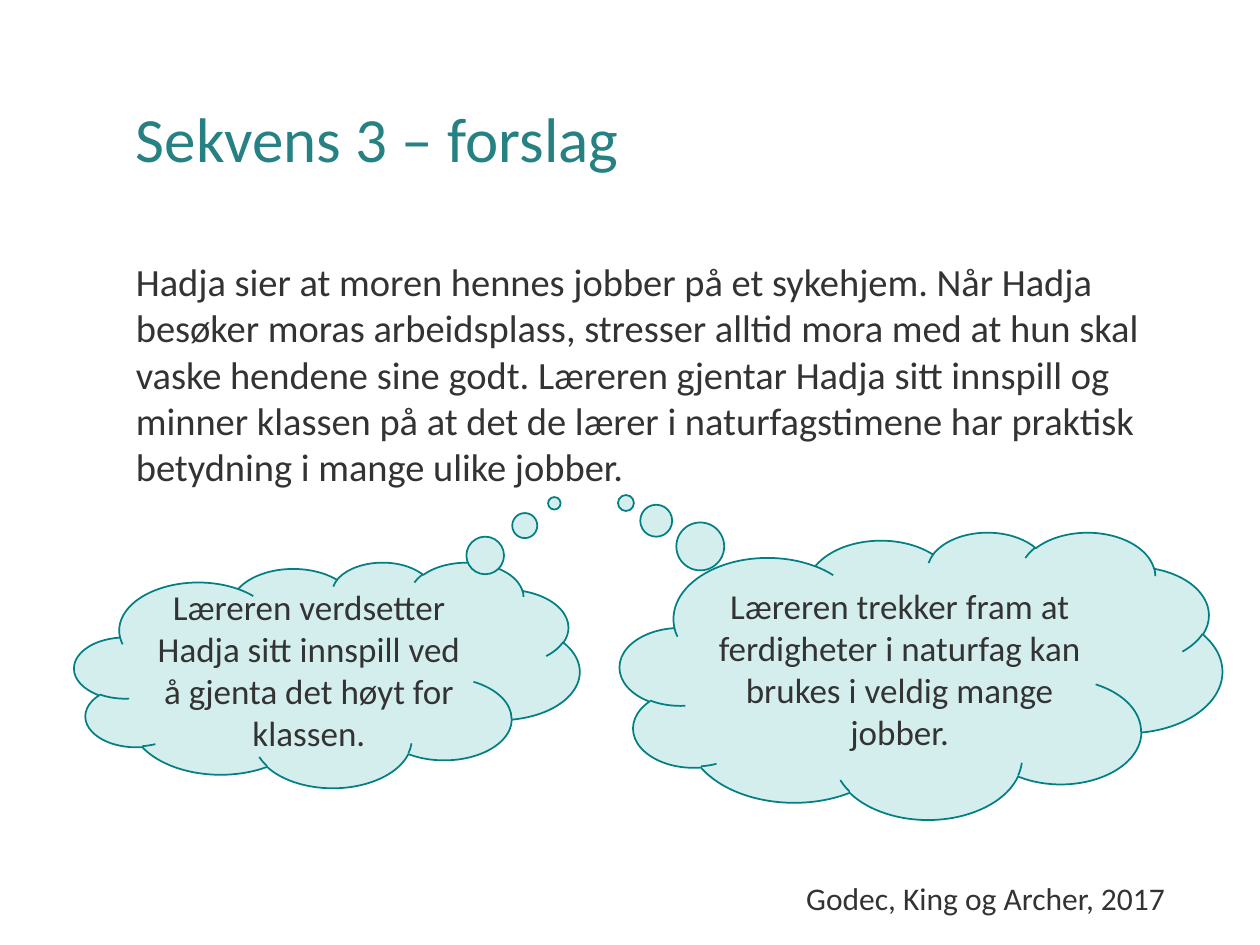
from pptx import Presentation
from pptx.dml.color import RGBColor
from pptx.enum.shapes import MSO_SHAPE
from pptx.enum.text import MSO_ANCHOR, MSO_AUTO_SIZE, PP_ALIGN
from pptx.util import Inches, Pt

TEAL = RGBColor(0x26, 0x81, 0x83)
EDGE = RGBColor(0x03, 0x7F, 0x83)
PALE = RGBColor(0xD4, 0xEE, 0xEE)
DARK = RGBColor(0x33, 0x33, 0x33)


def write(shape, text, size, color=DARK):
    frame = shape.text_frame
    frame.word_wrap = True
    frame.text = text
    font = frame.paragraphs[0].runs[0].font
    font.name = "Calibri"
    font.size = Pt(size)
    font.color.rgb = color
    return frame


def add_text(slide, box, text, size, color=DARK):
    shape = slide.shapes.add_textbox(*map(Inches, box))
    return write(shape, text, size, color)


def add_title(slide, box, text):
    frame = add_text(slide, box, text, 36, TEAL)
    frame.vertical_anchor = MSO_ANCHOR.MIDDLE
    frame.paragraphs[0].line_spacing = 0.9


def add_source(slide, box, text):
    frame = add_text(slide, box, text, 18)
    frame.word_wrap = False
    frame.auto_size = MSO_AUTO_SIZE.SHAPE_TO_FIT_TEXT


def add_cloud(slide, box, tail, text):
    """Draw a thought cloud; tail is its tip's offset from the centre, as shares of the box."""
    cloud = slide.shapes.add_shape(MSO_SHAPE.CLOUD_CALLOUT, *map(Inches, box))
    cloud.adjustments[0], cloud.adjustments[1] = tail
    cloud.shadow.inherit = False
    cloud.fill.solid()
    cloud.fill.fore_color.rgb = PALE
    cloud.line.color.rgb = EDGE
    cloud.line.width = Pt(1)
    frame = write(cloud, text, 20)
    frame.vertical_anchor = MSO_ANCHOR.MIDDLE
    frame.paragraphs[0].alignment = PP_ALIGN.CENTER


def main():
    deck = Presentation()
    deck.slide_width, deck.slide_height = Inches(10), Inches(7.5)
    slide = deck.slides.add_slide(deck.slide_layouts[6])
    add_title(slide, (0.98, 0.4, 8.29, 1.45), "Sekvens 3 – forslag")
    add_text(
        slide, (0.98, 2, 8.29, 4.57),
        "Hadja sier at moren hennes jobber på et sykehjem. Når Hadja besøker "
        "moras arbeidsplass, stresser alltid mora med at hun skal vaske hendene "
        "sine godt. Læreren gjentar Hadja sitt innspill og minner klassen på at "
        "det de lærer i naturfagstimene har praktisk betydning i mange ulike "
        "jobber.", 22)
    add_cloud(
        slide, (0.59, 4.46, 4.01, 1.79), (0.45, -0.76),
        "Læreren verdsetter Hadja sitt innspill ved å gjenta det høyt for klassen.")
    add_cloud(
        slide, (4.92, 4.22, 4.78, 2.28), (-0.49, -0.6),
        "Læreren trekker fram at ferdigheter i naturfag kan brukes i veldig "
        "mange jobber.")
    add_source(slide, (6.3, 6.93, 3.09, 0.4), "Godec, King og Archer, 2017")
    deck.save("out.pptx")


if __name__ == "__main__":
    main()
